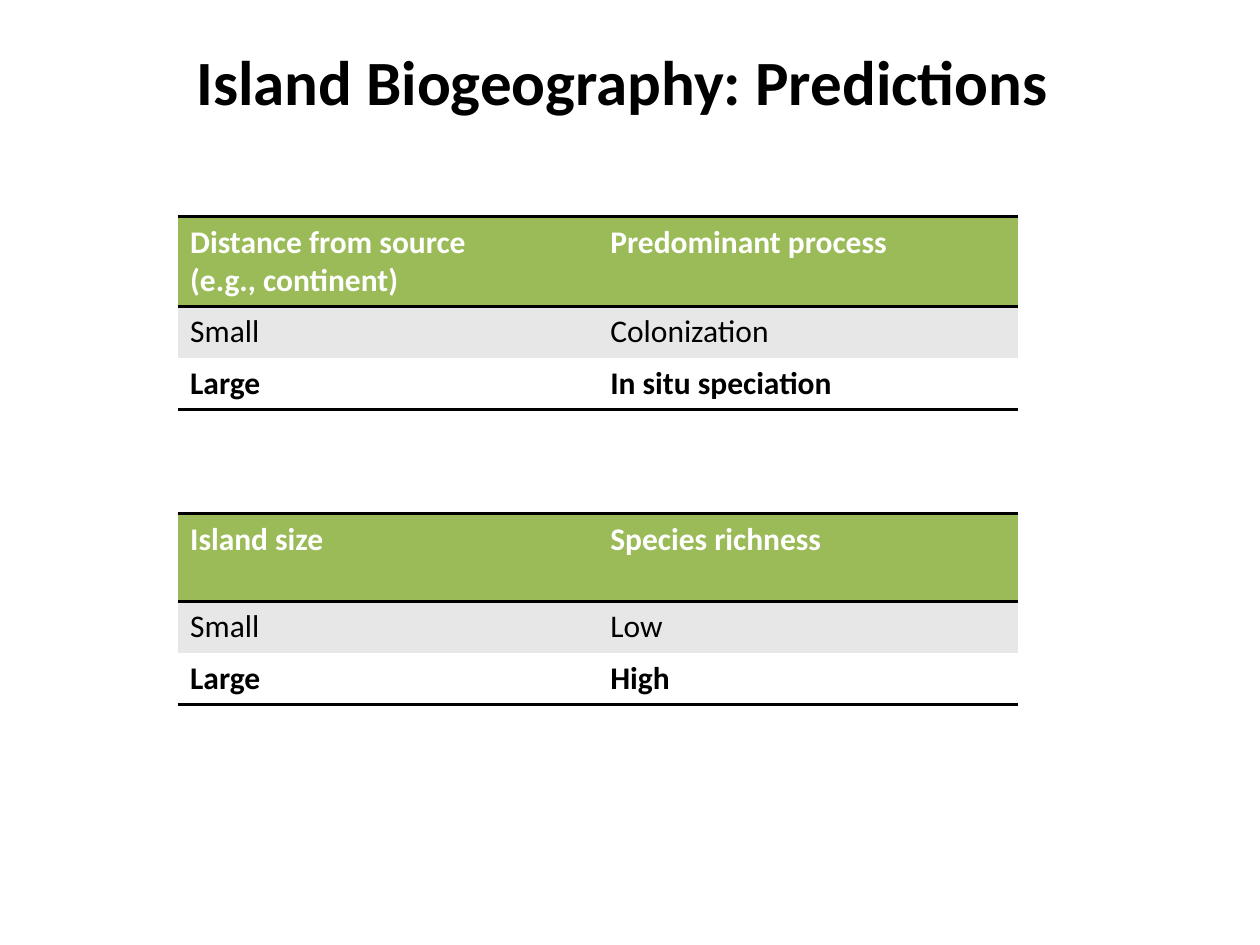
"""Build a slide with two tables of island biogeography predictions."""
from lxml import etree
from pptx import Presentation
from pptx import util as u
from pptx.dml.color import RGBColor
from pptx.enum import text
from pptx.oxml.ns import qn

BLACK = RGBColor(0x00, 0x00, 0x00)
WHITE = RGBColor(0xFF, 0xFF, 0xFF)
GREEN = RGBColor(0x9B, 0xBB, 0x59)
GREY = RGBColor(0xE7, 0xE7, 0xE7)
NO_STYLE = "{2D5ABB26-0587-4C30-8999-92F81FD0307C}"

LEFT, WIDTH = u.Cm(3.58), u.Cm(16.94)
ROW_HEIGHTS = [u.Cm(1.76), u.Cm(1.04), u.Cm(1.04)]
ROW_LOOKS = [
    (GREEN, WHITE, True, ("lnT", "lnB")),
    (GREY, BLACK, False, ()),
    (WHITE, BLACK, True, ("lnB",)),
]
PREDICTIONS = [
    (u.Cm(4.37), [
        ("Distance from source\n(e.g., continent)", "Predominant process"),
        ("Small", "Colonization"),
        ("Large", "In situ speciation"),
    ]),
    (u.Cm(10.36), [
        ("Island size", "Species richness"),
        ("Small", "Low"),
        ("Large", "High"),
    ]),
]


def format_runs(frame, size, color, bold):
    for paragraph in frame.paragraphs:
        for run in paragraph.runs:
            run.font.name = "Calibri"
            run.font.size = u.Pt(size)
            run.font.bold = bold
            run.font.color.rgb = color


def add_rule(cell, side):
    rule = etree.SubElement(cell._tc.get_or_add_tcPr(), qn("a:" + side), w=str(u.Pt(2)))
    fill = etree.SubElement(rule, qn("a:solidFill"))
    etree.SubElement(fill, qn("a:srgbClr"), val=str(BLACK))


prs = Presentation()
prs.slide_width, prs.slide_height = u.Cm(25.4), u.Cm(19.05)
slide = prs.slides.add_slide(prs.slide_layouts[5])

heading = slide.shapes.title
heading.left, heading.top = u.Cm(-1.12), u.Cm(-1.45)
heading.width, heading.height = u.Cm(27.33), u.Cm(6.15)
heading.text_frame.text = "Island Biogeography: Predictions"
heading.text_frame.vertical_anchor = text.MSO_ANCHOR.MIDDLE
heading.text_frame.paragraphs[0].alignment = text.PP_ALIGN.CENTER
format_runs(heading.text_frame, 36, BLACK, True)

for top, rows in PREDICTIONS:
    frame = slide.shapes.add_table(len(rows), 2, LEFT, top, WIDTH, sum(ROW_HEIGHTS))
    prediction = frame.table
    prediction._tbl.tblPr.find(qn("a:tableStyleId")).text = NO_STYLE
    for r, (words, look) in enumerate(zip(rows, ROW_LOOKS)):
        background, ink, bold, rules = look
        prediction.rows[r].height = ROW_HEIGHTS[r]
        for c, wording in enumerate(words):
            cell = prediction.cell(r, c)
            cell.text_frame.text = wording
            format_runs(cell.text_frame, 18, ink, bold)
            for side in rules:
                add_rule(cell, side)
            cell.fill.solid()
            cell.fill.fore_color.rgb = background

prs.save("out.pptx")
